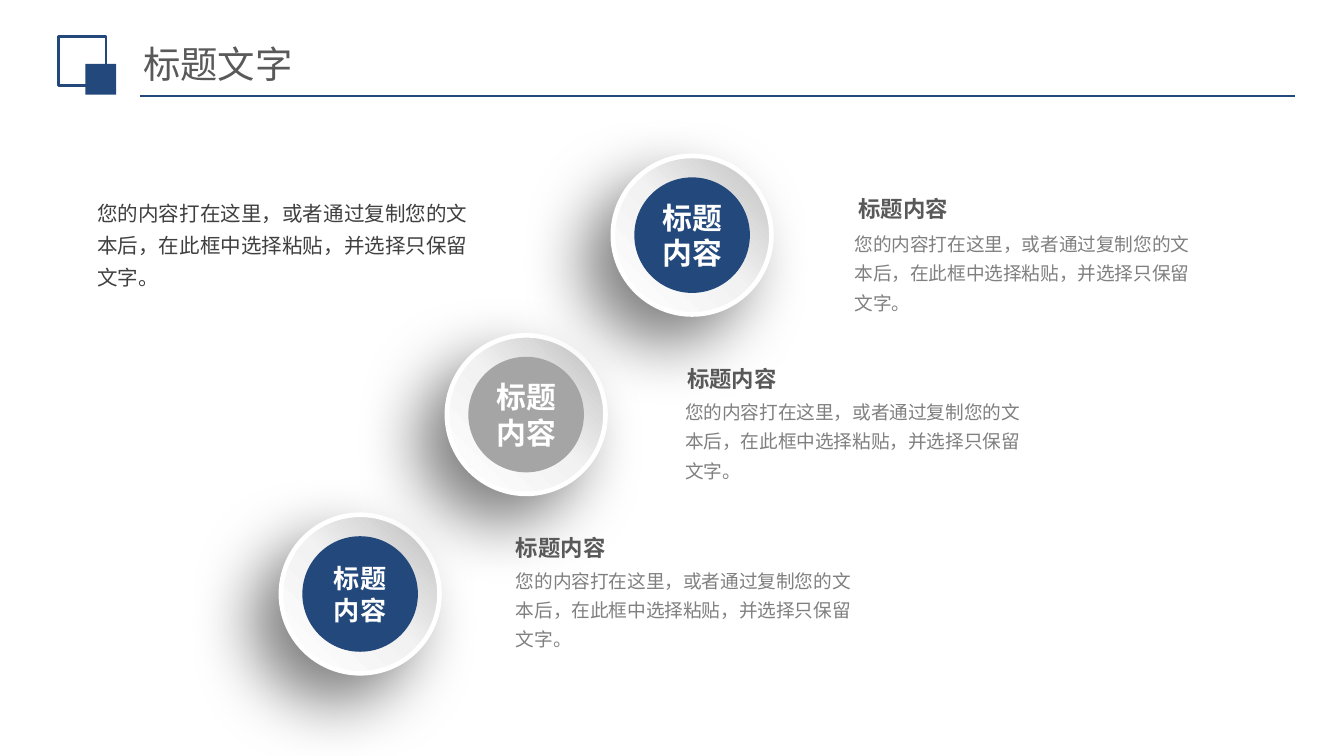
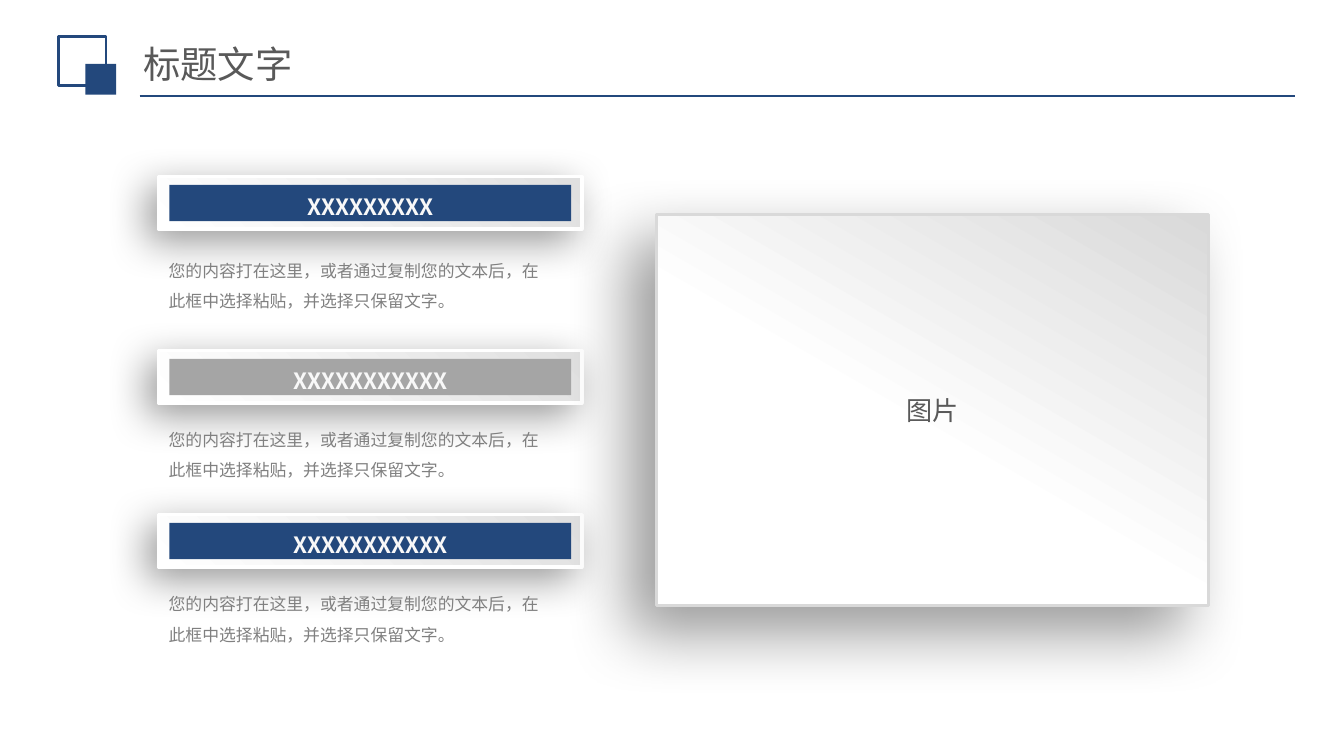
from dataclasses import dataclass

from lxml import etree
from pptx import Presentation
from pptx.dml.color import RGBColor
from pptx.enum.shapes import MSO_CONNECTOR, MSO_SHAPE
from pptx.enum.text import MSO_ANCHOR, PP_ALIGN
from pptx.oxml.ns import qn
from pptx.util import Emu, Pt

PX = 4572  # EMU per px, 200 px to the inch


@dataclass(frozen=True)
class Theme:
    # Colours
    navy: str = "23487C"
    grey: str = "A5A5A5"
    white: str = "FFFFFF"
    label: str = "F8F8F8"
    edge: str = "D9D9D9"
    heading: str = "595959"
    intro: str = "404040"
    body: str = "808080"
    # Fonts
    latin: str = "Arial"
    cjk: str = "Noto Sans CJK SC"
    panel_font: str = "DejaVu Sans"
    # Type sizes
    title_size: int = 20
    panel_size: int = 14
    heading_size: int = 12
    intro_size: int = 11
    body_size: int = 10
    small_size: int = 9
    # Gradients: stops and clockwise angle
    ring_fill: tuple = (((0, "FFFFFF"), (50, "F2F2F2"), (100, "BFBFBF")), 315)
    frame_fill: tuple = (((0, "E0E0E0"), (100, "FFFFFF")), 135)
    panel_fill: tuple = (((45, "FFFFFF"), (100, "D9D9D9")), 300)
    # Shadows: opacity in percent, blur and distance in points
    ring_shadow: tuple = (50, 35, 20)
    frame_shadow: tuple = (40, 22, 8)
    panel_shadow: tuple = (40, 35, 20)


T = Theme()
TITLE = "标题文字"
HEADING = "标题内容"
BODY = "您的内容打在这里，或者通过复制您的文本后，在此框中选择粘贴，并选择只保留文字。"
TIGHT = (15, 8)
CHIP = (0, 8)


def px(*values):
    return [Emu(v * PX) for v in values]


def rgb(color):
    return RGBColor.from_string(color)


def add_color(parent, color):
    return etree.SubElement(parent, qn("a:srgbClr"), val=color)


# Fills and shadows
def set_gradient(s, stops, angle):
    s.fill.background()
    spPr = s._element.spPr
    grad = etree.Element(qn("a:gradFill"), rotWithShape="1")
    stop_list = etree.SubElement(grad, qn("a:gsLst"))
    for pos, color in stops:
        add_color(etree.SubElement(stop_list, qn("a:gs"), pos=str(pos * 1000)), color)
    etree.SubElement(grad, qn("a:lin"), ang=str(angle * 60000), scaled="0")
    spPr.replace(spPr.find(qn("a:noFill")), grad)


def set_shadow(s, opacity, blur, distance):
    effects = s._element.spPr.find(qn("a:effectLst"))
    shadow = etree.SubElement(
        effects, qn("a:outerShdw"), blurRad=str(Pt(blur)), dist=str(Pt(distance)),
        dir=str(135 * 60000), algn="tr", rotWithShape="0")
    color = add_color(shadow, "000000")
    etree.SubElement(color, qn("a:alpha"), val=str(opacity * 1000))


# Shapes and text
def add_shape(slide, kind, box, fill=None, line=None, width=0, shadow=None):
    s = slide.shapes.add_shape(kind, *px(*box))
    s.shadow.inherit = False
    if fill is None:
        s.fill.background()
    elif isinstance(fill, str):
        s.fill.solid()
        s.fill.fore_color.rgb = rgb(fill)
    else:
        set_gradient(s, *fill)
    if line:
        s.line.color.rgb = rgb(line)
        s.line.width = Pt(width)
    else:
        s.line.fill.background()
    if shadow:
        set_shadow(s, *shadow)
    return s


def set_text(s, lines, size, color, font=T.latin, bold=False, spacing=None,
             align=PP_ALIGN.LEFT, anchor=MSO_ANCHOR.TOP, inset=(20, 10), wrap=True):
    tf = s.text_frame
    tf.word_wrap = wrap
    tf.vertical_anchor = anchor
    tf.margin_left, tf.margin_top = tf.margin_right, tf.margin_bottom = px(*inset)
    tf.text = "\n".join(lines)
    for p in tf.paragraphs:
        p.alignment = align
        if spacing:
            p.line_spacing = spacing
        p.font.name = font
        p.font.size = Pt(size)
        p.font.bold = bold
        p.font.color.rgb = rgb(color)


def add_text(slide, box, text, size, color, **style):
    set_text(slide.shapes.add_textbox(*px(*box)), [text], size, color, **style)


def add_chip(slide, kind, box, fill, lines, size, color, **style):
    s = add_shape(slide, kind, box, fill)
    set_text(s, lines, size, color, bold=True, align=PP_ALIGN.CENTER,
             anchor=MSO_ANCHOR.MIDDLE, inset=CHIP, wrap=False, **style)


# Header shared by the slides
def add_header(slide):
    rule = slide.shapes.add_connector(MSO_CONNECTOR.STRAIGHT, *px(208, 143, 1927, 143))
    rule.line.color.rgb = rgb(T.navy)
    rule.line.width = Pt(1.25)
    etree.SubElement(rule._element.spPr, qn("a:effectLst"))
    add_shape(slide, MSO_SHAPE.RECTANGLE, (87, 54, 71, 73), line=T.navy, width=1.5)
    add_shape(slide, MSO_SHAPE.RECTANGLE, (127, 95, 46, 46), T.navy)
    add_text(slide, (198, 58, 1290, 72), TITLE, T.title_size, T.heading,
             font=T.cjk, anchor=MSO_ANCHOR.MIDDLE, inset=TIGHT)


# Content elements
def add_ring(slide, x, y, fill, size):
    add_shape(slide, MSO_SHAPE.OVAL, (x, y, 236, 236), T.ring_fill,
              T.white, 2.5, T.ring_shadow)
    add_chip(slide, MSO_SHAPE.OVAL, (x + 32, y + 32, 172, 172), fill,
             ["标题", "内容"], size, T.white)


def add_note(slide, heading_at, body_at):
    add_text(slide, (*heading_at, 176, 60), HEADING, T.heading_size, T.heading,
             bold=True, spacing=Pt(15), wrap=False)
    add_text(slide, (*body_at, 552, 152), BODY, T.body_size, T.body, spacing=1.3)


def add_band(slide, y, fill, label, text_y):
    add_shape(slide, MSO_SHAPE.RECTANGLE, (236, y, 630, 78), T.frame_fill,
              T.white, 1.75, T.frame_shadow)
    add_chip(slide, MSO_SHAPE.RECTANGLE, (252, y + 12, 598, 54), fill, [label],
             T.heading_size, T.label, font=T.cjk, spacing=1.3)
    add_text(slide, (236, text_y, 598, 110), BODY, T.small_size, T.body,
             font=T.cjk, spacing=1.5, inset=TIGHT)


# Slides
def build_rings(slide):
    add_header(slide)
    add_text(slide, (125, 279, 608, 164), BODY, T.intro_size, T.intro, spacing=1.3)
    for ring in ((418, 766, T.navy, 14), (665, 499, T.grey, 16), (912, 232, T.navy, 16)):
        add_ring(slide, *ring)
    for heading_at, body_at in (((1258, 279), (1252, 327)),
                                ((1003, 532), (1000, 577)),
                                ((748, 784), (748, 828))):
        add_note(slide, heading_at, body_at)


def build_bands(slide):
    add_header(slide)
    for band in ((263, T.navy, "XXXXXXXXX", 365),
                 (522, T.grey, "XXXXXXXXXXX", 616),
                 (766, T.navy, "XXXXXXXXXXX", 861)):
        add_band(slide, *band)
    panel = add_shape(slide, MSO_SHAPE.RECTANGLE, (977, 319, 822, 582), T.panel_fill,
                      T.edge, 1.75, T.panel_shadow)
    set_text(panel, ["图片"], T.panel_size, T.heading, font=T.panel_font,
             align=PP_ALIGN.CENTER, anchor=MSO_ANCHOR.MIDDLE)


def main():
    prs = Presentation()
    prs.slide_width, prs.slide_height = px(2000, 1125)
    blank = prs.slide_layouts[6]
    for build in (build_rings, build_bands):
        build(prs.slides.add_slide(blank))
    prs.save("out.pptx")


if __name__ == "__main__":
    main()
